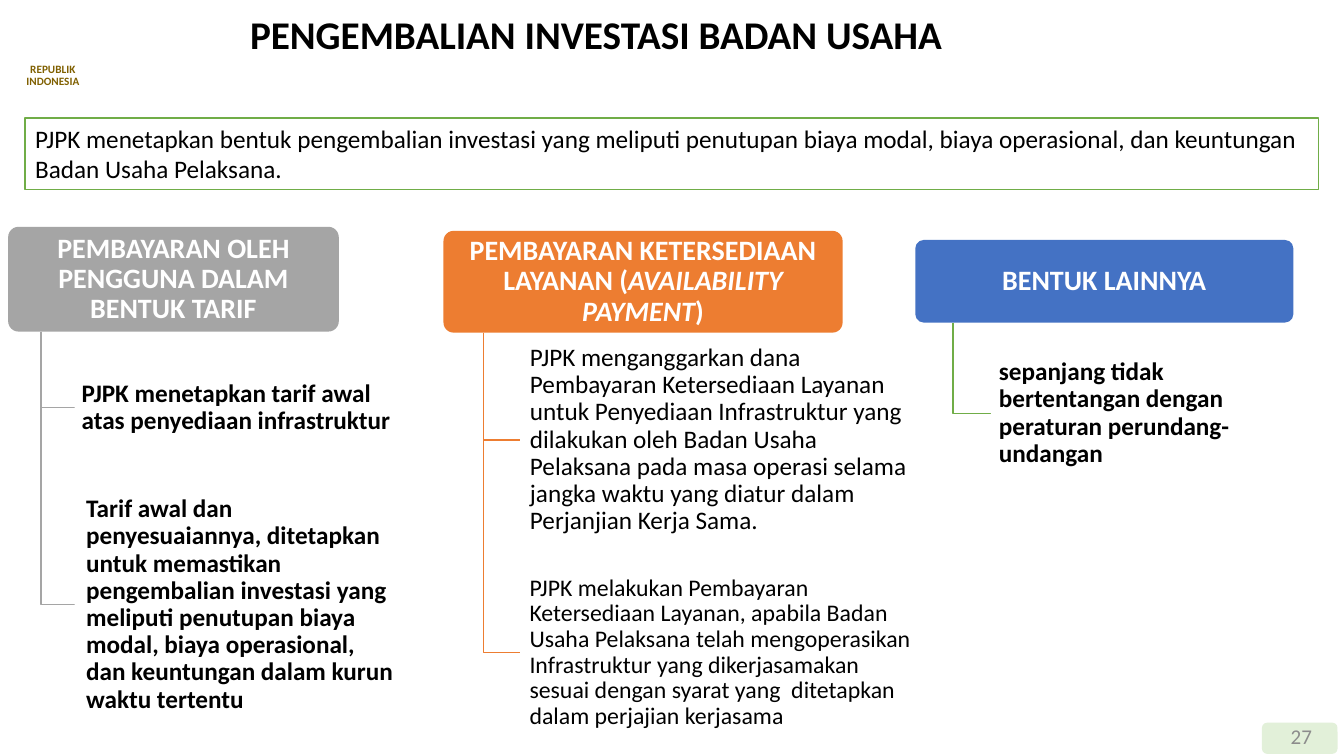
from lxml.etree import SubElement
from pptx import Presentation
from pptx.dml.color import RGBColor
from pptx.enum.shapes import MSO_SHAPE
from pptx.enum.text import MSO_ANCHOR, MSO_AUTO_SIZE, PP_ALIGN
from pptx.oxml.ns import qn
from pptx.util import Pt

FONT = "Calibri"
BLACK, WHITE, GREEN = "000000", "FFFFFF", "70AD47"

# Each column: header box, header runs (text, italic), fill, line colour,
# then cards as (box, text, size, bold). Boxes are left, top, width, height.
COLUMNS = [
    ((5.8, 162, 236.2, 74.9),
     [("PEMBAYARAN OLEH PENGGUNA DALAM BENTUK TARIF", False)],
     "A5A5A5", "A5A5A5",
     [((53.3, 256.3, 235.4, 69.8),
       "PJPK menetapkan tarif awal atas penyediaan infrastruktur", 18, True),
      ((53.3, 342, 236.2, 180),
       "Tarif awal dan penyesuaiannya, ditetapkan untuk memastikan "
       "pengembalian investasi yang meliputi penutupan biaya modal, biaya "
       "operasional, dan keuntungan dalam kurun waktu tertentu", 18, True)]),
    ((316.8, 164.9, 285.1, 72.7),
     [("PEMBAYARAN KETERSEDIAAN LAYANAN (", False),
      ("AVAILABILITY PAYMENT", True), (")", False)],
     "ED7D31", "ED7D31",
     [((371.5, 244.8, 288.7, 139),
       "PJPK menganggarkan dana Pembayaran Ketersediaan Layanan untuk "
       "Penyediaan Infrastruktur yang dilakukan oleh Badan Usaha Pelaksana "
       "pada masa operasi selama jangka waktu yang diatur dalam Perjanjian "
       "Kerja Sama.", 18, False),
      ((371.5, 402.5, 287.3, 127.4),
       "PJPK melakukan Pembayaran Ketersediaan Layanan, apabila Badan Usaha "
       "Pelaksana telah mengoperasikan Infrastruktur yang dikerjasamakan "
       "sesuai dengan syarat yang  ditetapkan dalam perjajian kerjasama",
       17, False)]),
    ((653.8, 171.4, 270, 59),
     [("BENTUK LAINNYA", False)],
     "4472C4", GREEN,
     [((707.8, 248.4, 227.5, 93.6),
       "sepanjang tidak bertentangan dengan peraturan perundang-undangan",
       18, True)]),
]


def color(value):
    return RGBColor.from_string(value)


def place(shape, box):
    shape.left, shape.top, shape.width, shape.height = map(Pt, box)


def write(shape, runs, size, text_color, bold=False, align=PP_ALIGN.LEFT,
          anchor=MSO_ANCHOR.MIDDLE, insets=(7.2, 3.6), spacing=None):
    """Fill one paragraph with (text, italic) runs."""
    frame = shape.text_frame
    frame.word_wrap = True
    frame.auto_size = MSO_AUTO_SIZE.NONE
    frame.vertical_anchor = anchor
    frame.margin_left = frame.margin_right = Pt(insets[0])
    frame.margin_top = frame.margin_bottom = Pt(insets[1])
    paragraph = frame.paragraphs[0]
    paragraph.alignment = align
    paragraph.line_spacing = spacing
    font = paragraph.font
    font.name, font.size, font.bold = FONT, Pt(size), bold
    font.color.rgb = color(text_color)
    for text, italic in runs:
        run = paragraph.add_run()
        run.text = text
        if italic:
            run.font.italic = True


def add_box(slide, kind, box, fill, line=None, radius=None, opacity=None):
    shape = slide.shapes.add_shape(kind, *map(Pt, box))
    shape.shadow.inherit = False
    shape.fill.solid()
    shape.fill.fore_color.rgb = color(fill)
    if radius is not None:
        shape.adjustments[0] = radius
    if opacity is not None:
        fill_color = shape.fill._xPr.find(qn("a:solidFill"))[0]
        SubElement(fill_color, qn("a:alpha")).set("val", str(opacity * 1000))
    if line:
        shape.line.color.rgb = color(line)
        shape.line.width = Pt(1)
    else:
        shape.line.fill.background()
    return shape


def add_label(slide, box, text, size, text_color, **style):
    label = slide.shapes.add_textbox(*map(Pt, box))
    write(label, [(text, False)], size, text_color, align=PP_ALIGN.CENTER, **style)


def add_branch(slide, header_box, card_box, line):
    """Run from a tenth along the header's foot to the card's left middle."""
    left, top, width, height = header_box
    trunk, foot = left + width / 10, top + height
    middle = card_box[1] + card_box[3] / 2
    builder = slide.shapes.build_freeform(Pt(trunk), Pt(foot))
    builder.add_line_segments(
        [(Pt(trunk), Pt(middle)), (Pt(card_box[0]), Pt(middle))], close=False)
    branch = builder.convert_to_shape()
    branch.shadow.inherit = False
    branch.fill.background()
    branch.line.color.rgb = color(line)
    branch.line.width = Pt(1)


def add_column(slide, header_box, header_runs, fill, line, cards):
    header = add_box(slide, MSO_SHAPE.ROUNDED_RECTANGLE, header_box, fill, radius=0.1)
    write(header, header_runs, 20, WHITE, bold=True, align=PP_ALIGN.CENTER,
          insets=(3, 2), spacing=0.9)
    for box, text, size, bold in cards:
        add_branch(slide, header_box, box, line)
        card = add_box(slide, MSO_SHAPE.ROUNDED_RECTANGLE, box, WHITE,
                       radius=0.1, opacity=90)
        write(card, [(text, False)], size, BLACK, bold=bold,
              insets=(3, 2), spacing=0.9)


def main():
    presentation = Presentation()
    presentation.slide_width, presentation.slide_height = Pt(960), Pt(540)
    slide = presentation.slides.add_slide(presentation.slide_layouts[5])

    # Title and emblem caption
    title = slide.shapes.title
    place(title, (171.4, 7.2, 617, 38.2))
    write(title, [("PENGEMBALIAN INVESTASI BADAN USAHA", False)], 28, BLACK,
          bold=True, spacing=0.9)
    add_label(slide, (4.3, 41.8, 67, 24.5), "REPUBLIK INDONESIA", 8, "806000",
              bold=True, anchor=MSO_ANCHOR.TOP, insets=(8.6, 4.3), spacing=Pt(8.3))

    # Introduction
    intro = add_box(slide, MSO_SHAPE.RECTANGLE, (18, 84.2, 923.8, 51.1), WHITE, GREEN)
    write(intro, [("PJPK menetapkan bentuk pengembalian investasi yang meliputi "
                   "penutupan biaya modal, biaya operasional, dan keuntungan "
                   "Badan Usaha Pelaksana.", False)], 18, BLACK)

    # Three forms of return
    for column in COLUMNS:
        add_column(slide, *column)

    # Page number
    add_box(slide, MSO_SHAPE.ROUNDED_RECTANGLE, (901.4, 516.2, 54, 22.3), "E2F0D9")
    add_label(slide, (900, 511.2, 59, 28.8), "27", 15, "8C8C8C", insets=(8.6, 4.3))

    presentation.save("out.pptx")


if __name__ == "__main__":
    main()
